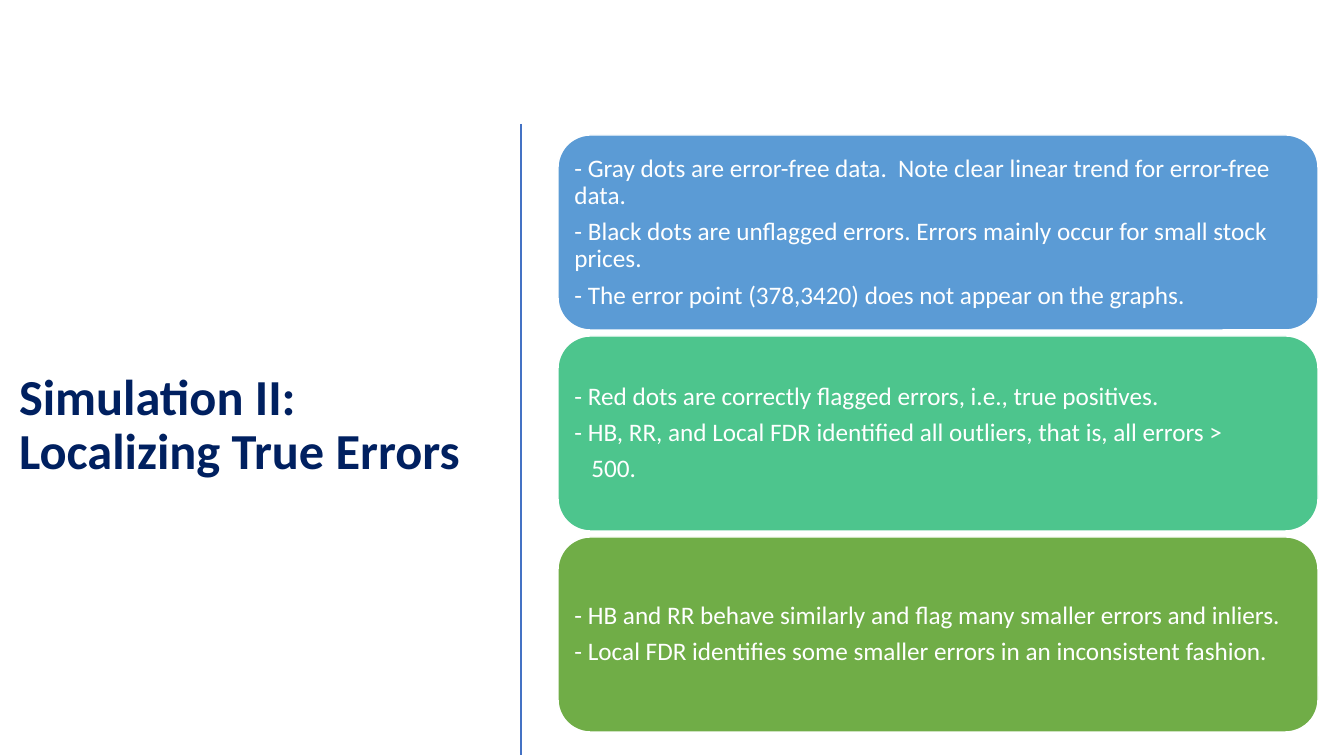
from dataclasses import dataclass

from lxml.etree import SubElement
from pptx import Presentation
from pptx.dml.color import RGBColor
from pptx.enum.shapes import MSO_CONNECTOR, MSO_SHAPE
from pptx.enum.text import MSO_ANCHOR, MSO_AUTO_SIZE, PP_ALIGN
from pptx.oxml.ns import qn
from pptx.util import Emu, Pt

TITLE = "Simulation II:\vLocalizing True Errors"

# Each card: fill colour, then (text, left indent in px) lines
CARDS = [
    ("5B9BD5", [
        ("- Gray dots are error-free data.  Note clear linear trend for error-free data.", 0),
        ("- Black dots are unflagged errors. Errors mainly occur for small stock prices.", 0),
        ("- The error point (378,3420) does not appear on the graphs.", 0),
    ]),
    ("4DC58D", [
        ("- Red dots are correctly flagged errors, i.e., true positives.", 0),
        ("- HB, RR, and Local FDR identified all outliers, that is, all errors >", 0),
        ("500.", 17),
    ]),
    ("70AD47", [
        ("- HB and RR behave similarly and flag many smaller errors and inliers.", 0),
        ("- Local FDR identifies some smaller errors in an inconsistent fashion.", 0),
    ]),
]


@dataclass(frozen=True)
class Theme:
    font: str = "Calibri"
    navy: str = "002060"
    white: str = "FFFFFF"
    rule: str = "4472C4"
    head: int = 36
    body: int = 18


THEME = Theme()
LEFT, TOP, WIDE, HIGH, GAP = 558, 135, 760, 195, 6
INSET = 7


def px(n):
    return Emu(round(n * 914400 / 100.8))


def rgb(code):
    return RGBColor.from_string(code)


def apply(item, **values):
    for name, value in values.items():
        setattr(item, name, value)


def style(para, size, color, bold=False):
    apply(para, alignment=PP_ALIGN.LEFT, line_spacing=0.9)
    apply(para.font, name=THEME.font, size=Pt(size), bold=bold)
    para.font.color.rgb = rgb(color)


def add_title(slide):
    title = slide.shapes.title
    apply(title, left=px(9), top=px(118), width=px(512), height=px(616))
    frame = title.text_frame
    apply(frame, text=TITLE, word_wrap=True, auto_size=MSO_AUTO_SIZE.NONE,
          vertical_anchor=MSO_ANCHOR.MIDDLE)
    style(frame.paragraphs[0], THEME.head, THEME.navy, True)


def add_rule(slide):
    rule = slide.shapes.add_connector(
        MSO_CONNECTOR.STRAIGHT, px(521), px(124), px(521), px(755))
    rule.line.color.rgb = rgb(THEME.rule)
    rule.line.width = Pt(2)
    SubElement(rule._element.spPr, qn("a:effectLst"))


def add_card(slide, top, color, lines):
    card = slide.shapes.add_shape(
        MSO_SHAPE.ROUNDED_RECTANGLE, px(LEFT), px(top), px(WIDE), px(HIGH))
    card.shadow.inherit = False
    card.fill.solid()
    card.fill.fore_color.rgb = rgb(color)
    card.line.color.rgb = rgb(THEME.white)
    card.line.width = Pt(1)

    frame = card.text_frame
    apply(frame, word_wrap=True, vertical_anchor=MSO_ANCHOR.MIDDLE)
    for side in ("left", "right", "top", "bottom"):
        setattr(frame, f"margin_{side}", px(INSET))
    frame.text = "\n".join(text for text, _ in lines)
    for para, (_, indent) in zip(frame.paragraphs, lines):
        style(para, THEME.body, THEME.white)
        para.space_after = Pt(6.5)
        if indent:
            para._p.get_or_add_pPr().set("marL", str(px(indent)))


def main():
    deck = Presentation()
    apply(deck, slide_width=px(1344), slide_height=px(756))
    slide = deck.slides.add_slide(deck.slide_layouts.get_by_name("Title Only"))
    add_title(slide)
    add_rule(slide)
    for i, (color, lines) in enumerate(CARDS):
        add_card(slide, TOP + i * (HIGH + GAP), color, lines)
    deck.save("out.pptx")


if __name__ == "__main__":
    main()
